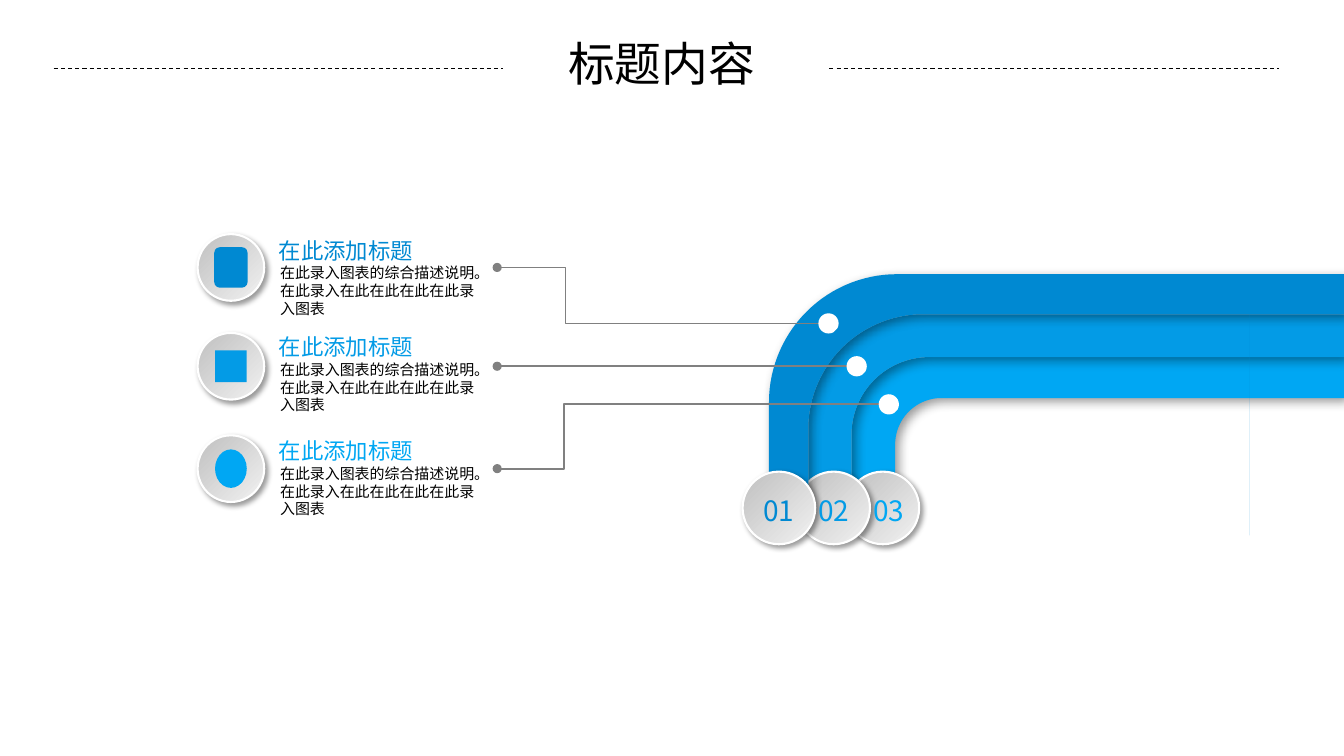
"""Build a slide with three nested curved bands linked to three described items."""
import math

from lxml import etree
from pptx import Presentation
from pptx import util as u
from pptx.dml import color
from pptx.enum import dml, shapes, text
from pptx.oxml import ns

FONT = "Noto Sans CJK SC"
TITLE = "标题内容"
HEADING = "在此添加标题"
DETAIL = "在此录入图表的综合描述说明。在此录入在此在此在此在此录入图表"
BLACK, GREY, WHITE = "000000", "808080", "FFFFFF"
SLIDE_W, SLIDE_H = 33.87, 19.05
RULE_Y, RULES = 1.73, [(1.35, 12.67), (20.9, 32.23)]

BLUES = ["0089D2", "039BE6", "00A7F3"]
NUMBERS = [("01", 19.63, 19.63), ("02", 21.01, 21.01), ("03", 22.25, 22.4)]
BAND_EDGES = [(19.38, 6.91, 3.23), (20.37, 7.92, 2.9), (21.46, 9, 1.96), (22.56, 10.03, 1.17)]
BAND_END, HAIRLINE_X, HAIRLINE_END = 12.83, 31.5, 13.49
NUMBER_Y, NUMBER_SIZE = 12.8, 1.83

ICON_X, ICON_DISC, LINK_X = 5.82, 1.68, 12.53
Shape = shapes.MSO_SHAPE
ITEMS = [
    {"y": 6.74, "heading": 5.84, "bend": 14.25, "target": (20.88, 8.15),
     "icon": (Shape.ROUNDED_RECTANGLE, 0.84, 1.02)},
    {"y": 9.23, "heading": 8.28, "bend": None, "target": (21.59, 9.23),
     "icon": (Shape.RECTANGLE, 0.8, 0.8)},
    {"y": 11.81, "heading": 10.9, "bend": 14.22, "target": (22.4, 10.19),
     "icon": (Shape.OVAL, 0.8, 0.97)},
]

deck = Presentation()
deck.slide_width, deck.slide_height = u.Cm(SLIDE_W), u.Cm(SLIDE_H)
slide = deck.slides.add_slide(deck.slide_layouts[6])
canvas = slide.shapes


def paint(colour_format, colour):
    colour_format.rgb = color.RGBColor.from_string(colour)


def cast_shadow(part, blur, distance):
    effects = part._element.spPr.get_or_add_effectLst() if hasattr(
        part._element.spPr, "get_or_add_effectLst") else etree.SubElement(
        part._element.spPr, ns.qn("a:effectLst"))
    outer = etree.SubElement(effects, ns.qn("a:outerShdw"), blurRad=str(u.Pt(blur)),
                             dist=str(u.Pt(distance)), dir="2700000", algn="tl", rotWithShape="0")
    shade = etree.SubElement(outer, ns.qn("a:srgbClr"), val=BLACK)
    etree.SubElement(shade, ns.qn("a:alpha"), val="40000")


def fill_plain(part, colour):
    part.shadow.inherit = False
    part.fill.solid()
    paint(part.fill.fore_color, colour)
    part.line.fill.background()


def centred(kind, x, y, width, height, colour):
    part = canvas.add_shape(kind, u.Cm(x - width / 2), u.Cm(y - height / 2),
                            u.Cm(width), u.Cm(height))
    fill_plain(part, colour)
    return part


def raised_disc(x, y, size):
    disc = centred(Shape.OVAL, x, y, size, size, WHITE)
    disc.fill.gradient()
    disc.fill.gradient_angle = 315
    for stop, colour in zip(disc.fill.gradient_stops, ["BFBFBF", "F2F2F2"]):
        paint(stop.color, colour)
    paint(disc.line.color, WHITE)
    disc.line.width = u.Pt(1.5)
    cast_shadow(disc, 4, 3)


def outline(points, closed):
    start, *rest = [(u.Cm(x), u.Cm(y)) for x, y in points]
    builder = canvas.build_freeform(*start)
    builder.add_line_segments(rest, close=closed)
    part = builder.convert_to_shape()
    part.shadow.inherit = False
    return part


def straight(x1, y1, x2, y2):
    line = canvas.add_connector(shapes.MSO_CONNECTOR.STRAIGHT,
                                u.Cm(x1), u.Cm(y1), u.Cm(x2), u.Cm(y2))
    etree.SubElement(line._element.spPr, ns.qn("a:effectLst"))
    return line


def write(words, x, y, width, height, size, colour, middle=False, pitch=None):
    box = canvas.add_textbox(u.Cm(x), u.Cm(y), u.Cm(width), u.Cm(height))
    frame = box.text_frame
    frame.text = words
    frame.word_wrap = True
    paragraph = frame.paragraphs[0]
    if middle:
        frame.vertical_anchor = text.MSO_ANCHOR.MIDDLE
        paragraph.alignment = text.PP_ALIGN.CENTER
    if pitch:
        paragraph.line_spacing = u.Pt(pitch)
    for run in paragraph.runs:
        run.font.size, run.font.name = u.Pt(size), FONT
        paint(run.font.color, colour)
        etree.SubElement(run.font._element, ns.qn("a:ea"), typeface=FONT)


def band_edge(left, top, radius):
    turns = [math.radians(step * 3) for step in range(31)]
    curve = [(left + radius * (1 - math.cos(turn)), top + radius * (1 - math.sin(turn)))
             for turn in turns]
    return [(left, BAND_END), *curve, (SLIDE_W, top)]


def band(index):
    outer, inner = BAND_EDGES[index:index + 2]
    hairline = []
    if index == 0:
        hairline = [(HAIRLINE_X, y) for y in (inner[1], HAIRLINE_END, inner[1])]
    back = band_edge(*inner)[::-1]
    part = outline(band_edge(*outer) + back[:1] + hairline + back[1:], True)
    fill_plain(part, BLUES[index])
    cast_shadow(part, 8, 4)


def number_disc(index):
    raised_disc(NUMBERS[index][1], NUMBER_Y, NUMBER_SIZE)


write(TITLE, 13.74, 0.74, 5.87, 1.68, 33.4, BLACK, middle=True)
for rule_start, rule_end in RULES:
    rule = straight(rule_start, RULE_Y, rule_end, RULE_Y)
    paint(rule.line.color, BLACK)
    rule.line.width = u.Pt(0.75)
    rule.line.dash_style = dml.MSO_LINE.DASH

for draw, index in [(band, 2), (band, 1), (number_disc, 2), (number_disc, 1),
                    (band, 0), (number_disc, 0)]:
    draw(index)
for (number, _, number_x), blue in zip(NUMBERS, BLUES):
    write(number, number_x - 0.76, 12.29, 1.52, 1.12, 20, blue, middle=True)

for item, blue in zip(ITEMS, BLUES):
    y, bend, (target_x, target_y) = item["y"], item["bend"], item["target"]
    if bend:
        link = outline([(target_x, target_y), (bend, target_y), (bend, y), (LINK_X, y)], False)
        link.fill.background()
    else:
        link = straight(target_x, target_y, LINK_X, y)
    paint(link.line.color, GREY)
    link.line.width = u.Pt(1.25)
    centred(Shape.OVAL, LINK_X, y, 0.23, 0.23, GREY)
    centred(Shape.OVAL, target_x, target_y, 0.51, 0.51, WHITE)
    write(HEADING, 6.78, item["heading"], 4.8, 0.94, 16, blue)
    write(DETAIL, 6.81, item["heading"] + 0.68, 5.49, 1.63, 10.7, BLACK, pitch=12.7)
    raised_disc(ICON_X, y, ICON_DISC)
    icon, icon_width, icon_height = item["icon"]
    centred(icon, ICON_X, y, icon_width, icon_height, blue)

deck.save("out.pptx")
